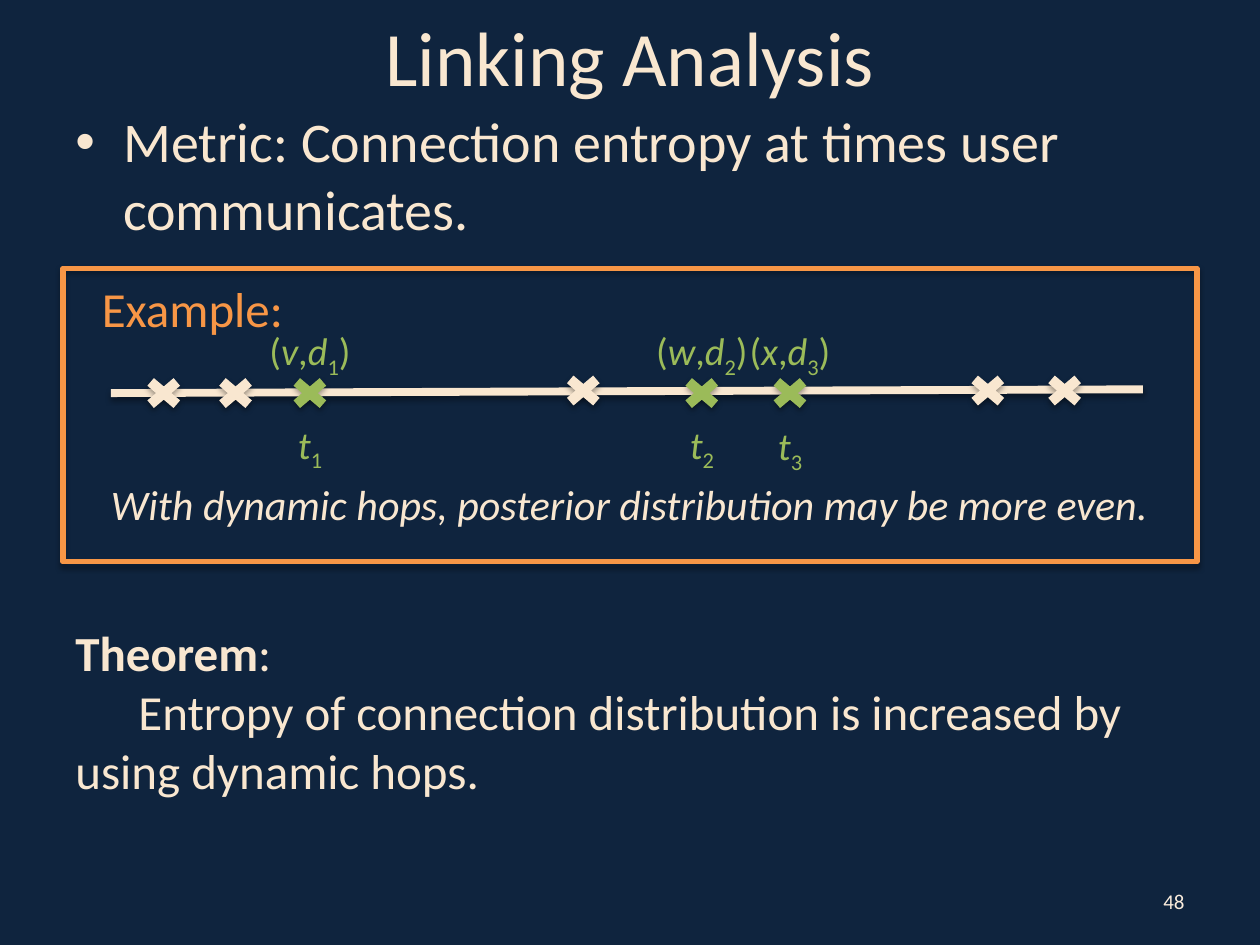
from dataclasses import dataclass

from lxml import etree
from pptx import Presentation
from pptx.dml.color import RGBColor
from pptx.enum.shapes import MSO_CONNECTOR, MSO_SHAPE
from pptx.enum.text import MSO_ANCHOR, PP_ALIGN
from pptx.oxml.ns import qn
from pptx.util import Inches, Pt

LEFT, CENTER, RIGHT = PP_ALIGN.LEFT, PP_ALIGN.CENTER, PP_ALIGN.RIGHT
TOP, MIDDLE = MSO_ANCHOR.TOP, MSO_ANCHOR.MIDDLE
RECT, CROSS = MSO_SHAPE.RECTANGLE, MSO_SHAPE.MATH_MULTIPLY
STRAIGHT = MSO_CONNECTOR.STRAIGHT


@dataclass(frozen=True)
class Theme:
    font: str = "Calibri"
    back: str = "0F243E"
    cream: str = "F9E7D0"
    pale: str = "FBEDDD"
    orange: str = "F79646"
    green: str = "9BBB59"
    title: int = 44
    body: int = 32
    head: int = 28
    note: int = 24
    label: int = 22
    small: int = 12


class Deck:
    """Holds the theme and the current slide."""

    def __init__(self, theme):
        self.theme = theme
        self.prs = Presentation()
        self.prs.slide_width, self.prs.slide_height = Inches(10), Inches(7.5)
        self.slide = self.prs.slides.add_slide(self.prs.slide_layouts[5])
        fill = self.slide.background.fill
        fill.solid()
        fill.fore_color.rgb = RGBColor.from_string(theme.back)

    def add_runs(self, para, runs, size, color, align=LEFT):
        """Add (text, style) runs; style letters: b bold, i italic, s subscript."""
        para.alignment = align
        for text, style in runs:
            run = para.add_run()
            run.text = text
            font = run.font
            font.name, font.size = self.theme.font, Pt(size)
            font.color.rgb = RGBColor.from_string(color)
            font.bold, font.italic = "b" in style, "i" in style
            if "s" in style:
                run._r.get_or_add_rPr().set("baseline", "-25000")

    def title(self, text, box):
        shape = self.slide.shapes.title
        shape.left, shape.top, shape.width, shape.height = map(Inches, box)
        shape.text_frame.vertical_anchor = MIDDLE
        self.add_runs(shape.text_frame.paragraphs[0], [(text, "")],
                      self.theme.title, self.theme.cream, CENTER)

    def text(self, box, paras, size, color, align=LEFT, wrap=True, anchor=TOP):
        frame = self.slide.shapes.add_textbox(*map(Inches, box)).text_frame
        frame.word_wrap, frame.vertical_anchor = wrap, anchor
        for n, runs in enumerate(paras):
            para = frame.add_paragraph() if n else frame.paragraphs[0]
            self.add_runs(para, runs, size, color, align)
        return frame.paragraphs

    def indent(self, para, left, first, bullet=None):
        props = para._p.get_or_add_pPr()
        props.set("marL", str(Inches(left)))
        props.set("indent", str(Inches(first)))
        if bullet:
            etree.SubElement(props, qn("a:buFont"), typeface="Arial")
            etree.SubElement(props, qn("a:buChar"), char=bullet)

    def shadow(self, shape, alpha, dist):
        effects = etree.SubElement(shape._element.spPr, qn("a:effectLst"))
        outer = etree.SubElement(
            effects, qn("a:outerShdw"), blurRad=str(Pt(3.1)),
            dist=str(Pt(dist)), dir="5400000", rotWithShape="0")
        color = etree.SubElement(outer, qn("a:srgbClr"), val="000000")
        etree.SubElement(color, qn("a:alpha"), val=str(alpha * 1000))

    def shape(self, kind, box, fill=None, line=None, width=3):
        shape = self.slide.shapes.add_shape(kind, *map(Inches, box))
        for part, color in ((shape.fill, fill), (shape.line.fill, line)):
            if color:
                part.solid()
                part.fore_color.rgb = RGBColor.from_string(color)
            else:
                part.background()
        if line:
            shape.line.width = Pt(width)
        self.shadow(shape, 35, 1.8)

    def line(self, ends, color, width):
        line = self.slide.shapes.add_connector(STRAIGHT, *map(Inches, ends))
        line.line.color.rgb = RGBColor.from_string(color)
        line.line.width = Pt(width)
        self.shadow(line, 38, 1.6)


def main():
    look = Theme()
    deck = Deck(look)

    # Title, metric bullet and page number
    deck.title("Linking Analysis", (0.5, 0, 9, 0.89))
    metric = deck.text(
        (0.5, 0.8, 9, 1.3),
        [[("Metric: Connection entropy at times user communicates.", "")]],
        look.body, look.cream)
    deck.indent(metric[0], 0.38, -0.38, "•")
    deck.text((7.17, 6.95, 2.33, 0.4), [[("48", "")]], look.small,
              look.pale, RIGHT, anchor=MIDDLE)

    # Example frame and time line
    deck.shape(RECT, (0.5, 2.13, 9, 2.33), line=look.orange)
    deck.text((0.71, 2.16, 1.66, 0.57), [[("Example:", "")]], look.head,
              look.orange, wrap=False)
    deck.line((0.88, 3.12, 9.07, 3.09), look.cream, 4.5)

    # Marks by centre and top
    wide, high = 0.4, 0.34
    for mid, top in ((1.3, 2.95), (1.87, 2.95), (4.63, 2.93),
                     (7.84, 2.93), (8.45, 2.93)):
        deck.shape(CROSS, (mid - wide / 2, top, wide, high), look.cream)

    # User events: green mark, pair above, time below
    events = ((2.46, "v", 3.29), (5.57, "w", 3.29), (6.27, "x", 3.3))
    for n, (mid, name, low) in enumerate(events, 1):
        deck.shape(CROSS, (mid - wide / 2, 2.95, wide, high), look.green)
        sub = (str(n), "s")
        pair = [("(", ""), (name, "i"), (",", ""), ("d", "i"), sub, (")", "")]
        for top, span, runs in ((2.55, 0.98, pair),
                                (low, 0.41, [("t", "i"), sub])):
            deck.text((mid - span / 2, top, span, 0.47), [runs], look.label,
                      look.green, CENTER, wrap=False)

    deck.text(
        (0.71, 3.75, 8.57, 0.5),
        [[("With dynamic hops, posterior distribution may be more even.", "i")]],
        look.note, look.cream, CENTER)

    # Theorem
    theorem = deck.text(
        (0.5, 4.89, 8.88, 1.51),
        [[("Theorem", "b"), (":", "")],
         [("Entropy of connection distribution is increased by "
           "using dynamic hops.", "")]],
        look.head, look.cream)
    deck.indent(theorem[1], 0, 0.5)

    deck.prs.save("out.pptx")


if __name__ == "__main__":
    main()
